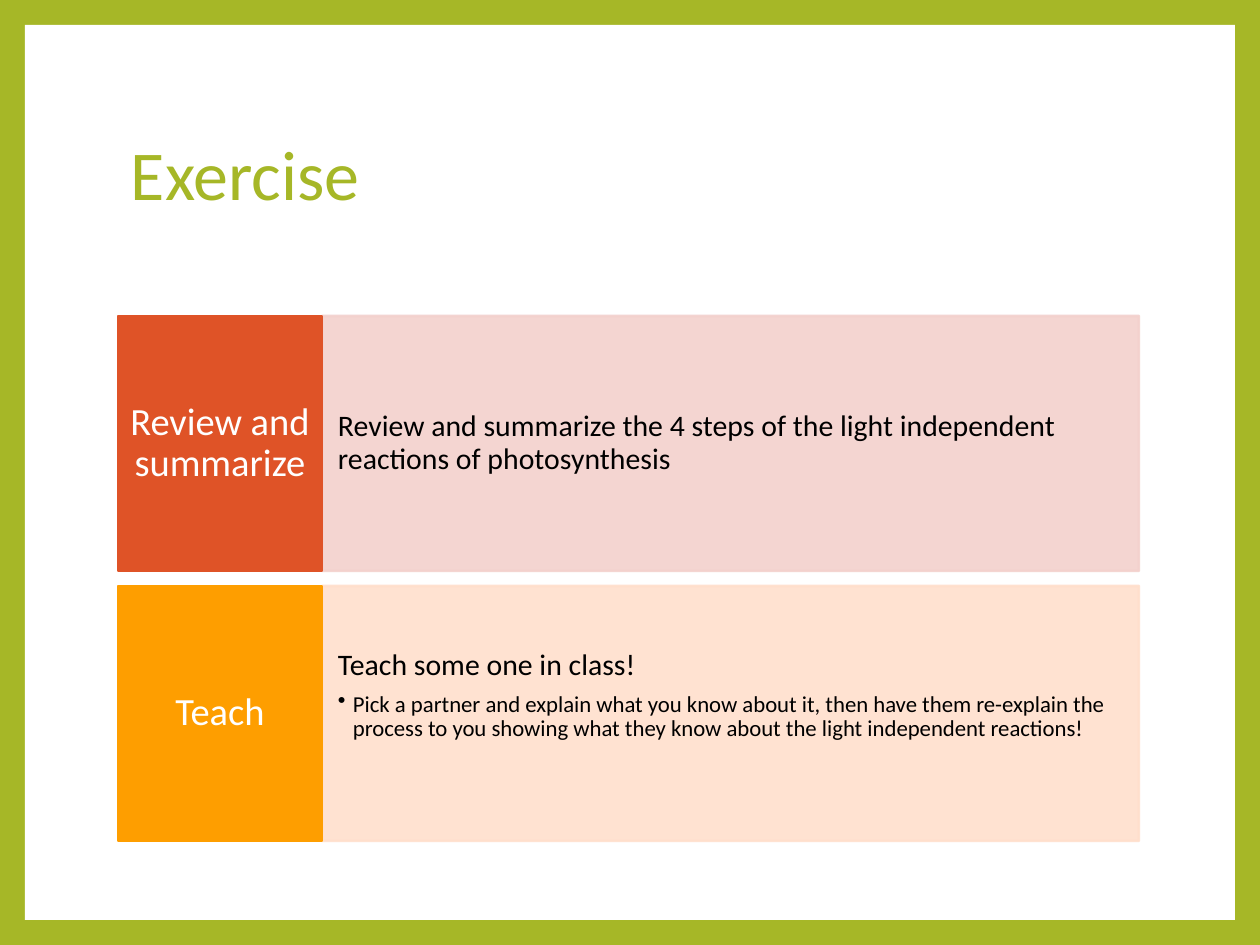
from lxml import etree
from pptx import Presentation
from pptx.dml.color import RGBColor
from pptx.enum.shapes import MSO_SHAPE
from pptx.enum.text import MSO_ANCHOR, PP_ALIGN
from pptx.oxml.ns import qn
from pptx.util import Emu, Pt

RECT = MSO_SHAPE.RECTANGLE
TOP, MIDDLE = MSO_ANCHOR.TOP, MSO_ANCHOR.MIDDLE
LEFT, CENTER = PP_ALIGN.LEFT, PP_ALIGN.CENTER
PX = 914400 / 126
GREEN, WHITE, BLACK = "A6B727", "FFFFFF", "000000"


def px(value):
    return Emu(round(value * PX))


def add_box(page, place, fill=None, opacity=100, anchor=MIDDLE, inset=(13, 6),
            align=LEFT, color=BLACK, paragraphs=()):
    """Add a rectangle or text box; each paragraph is (text, size, space after, bullet)."""
    place = [px(value) for value in place]
    if fill:
        box = page.shapes.add_shape(RECT, *place)
        box.shadow.inherit = False
        box.fill.solid()
        box.line.width = Pt(1.5)
        for paint in (box.fill, box.line.fill):
            paint.solid()
            paint.fore_color.rgb = RGBColor.from_string(fill)
        if opacity < 100:
            for tone in box._element.spPr.iter(qn("a:srgbClr")):
                etree.SubElement(tone, qn("a:alpha"), val=str(opacity * 1000))
    else:
        box = page.shapes.add_textbox(*place)
    frame = box.text_frame
    frame.word_wrap = True
    frame.vertical_anchor = anchor
    frame.margin_left = frame.margin_right = px(inset[0])
    frame.margin_top = frame.margin_bottom = px(inset[1])
    for index, (text, size, after, bullet) in enumerate(paragraphs):
        para = frame.add_paragraph() if index else frame.paragraphs[0]
        para.alignment = align
        para.line_spacing = 0.9
        para.space_after = Pt(after)
        if bullet:
            props = para._p.get_or_add_pPr()
            props.set("marL", str(px(15)))
            props.set("indent", str(-px(15)))
            etree.SubElement(props, qn("a:buChar"), char="•")
        span = para.add_run()
        span.text = text
        span.font.name = "Calibri"
        span.font.size = Pt(size)
        span.font.color.rgb = RGBColor.from_string(color)
    return box


deck = Presentation()
deck.slide_width, deck.slide_height = px(1260), px(945)
page = deck.slides.add_slide(deck.slide_layouts[6])

# Green border around a white panel
page.background.fill.solid()
page.background.fill.fore_color.rgb = RGBColor.from_string(GREEN)
panel = add_box(page, (25, 25, 1210, 895), WHITE)
panel.line.fill.background()

# Title
add_box(page, (118, 84, 1021, 187), color=GREEN,
        paragraphs=[("Exercise", 40, 0, False)])

# Exercise rows: label on the left, details on the right
rows = [
    ("Review and summarize", "DF5327", "F3D1CD", MIDDLE, [
        ("Review and summarize the 4 steps of the light independent "
         "reactions of photosynthesis", 17, 6, False)]),
    ("Teach", "FE9E00", "FFDFCC", TOP, [
        ("Teach some one in class!", 17, 6, False),
        ("Pick a partner and explain what you know about it, then have them "
         "re-explain the process to you showing what they know about the "
         "light independent reactions!", 13, 2, True)]),
]
for number, (label, strong, pale, anchor, details) in enumerate(rows):
    top = 316 + 270 * number
    add_box(page, (322, top, 817, 255), pale, 90, anchor, (16, 64),
            paragraphs=details)
    add_box(page, (118, top, 204, 255), strong, inset=(11, 25), align=CENTER,
            color=WHITE, paragraphs=[(label, 22, 8, False)])

deck.save("out.pptx")
